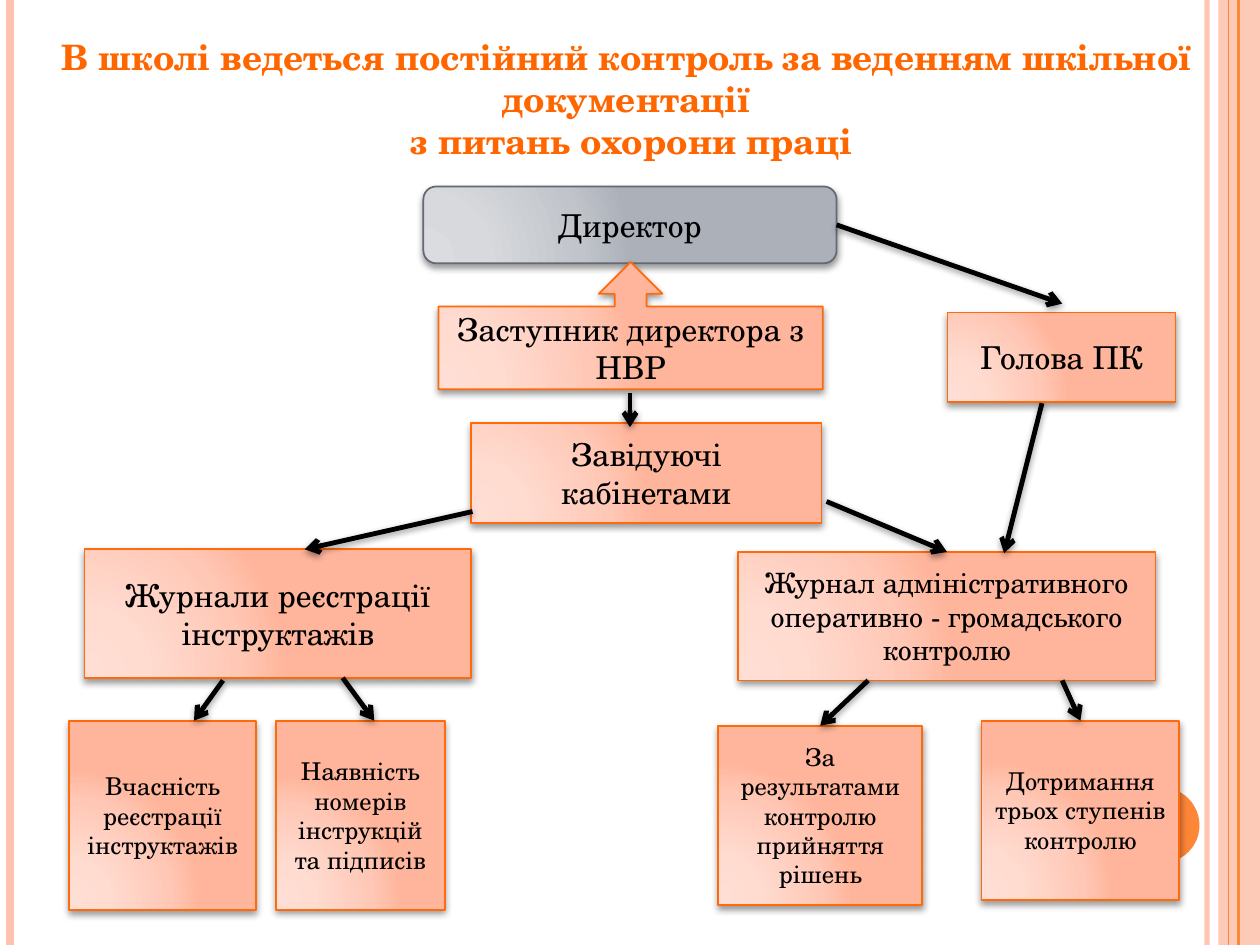
"""Build a slide with the chart of school labour-safety record control."""
from dataclasses import dataclass
from typing import Optional

import lxml.etree
import pptx
import pptx.dml.color
import pptx.enum.shapes
import pptx.enum.text
import pptx.oxml
import pptx.oxml.ns
import pptx.util

Inches = pptx.util.Inches
Pt = pptx.util.Pt
RGBColor = pptx.dml.color.RGBColor
Shapes = pptx.enum.shapes.MSO_SHAPE
Anchor = pptx.enum.text.MSO_ANCHOR

FONT = "TeX Gyre Schola"
BLACK = RGBColor(0x00, 0x00, 0x00)
TITLE_ORANGE = RGBColor(0xFF, 0x66, 0x00)
BORDER_ORANGE = RGBColor(0xFF, 0x6B, 0x0A)
BORDER_GRAY = RGBColor(0x63, 0x6A, 0x74)
ORANGE = RGBColor(0xFE, 0x86, 0x37)
PEACH = RGBColor(0xFE, 0xC3, 0xAE)
GRAY_STOPS = (
    (0, RGBColor(0xDA, 0xDC, 0xE0)),
    (30, RGBColor(0xD7, 0xD9, 0xDD)),
    (75, RGBColor(0xC1, 0xC5, 0xCB)),
    (100, RGBColor(0xAB, 0xB0, 0xB9)),
)
PEACH_STOPS = (
    (0, RGBColor(0xFF, 0xDE, 0xD5)),
    (30, RGBColor(0xFF, 0xDB, 0xD0)),
    (75, RGBColor(0xFF, 0xC8, 0xB6)),
    (100, RGBColor(0xFF, 0xB5, 0x9B)),
)
TOP, RIGHT = 0, 3


@dataclass(frozen=True)
class Box:
    text: str
    left: float
    top: float
    width: float
    height: float
    size: int = 18
    kind: int = Shapes.FLOWCHART_PROCESS
    stops: tuple = PEACH_STOPS
    border: RGBColor = BORDER_ORANGE


@dataclass(frozen=True)
class Arrow:
    start: tuple[float, float]
    end: tuple[float, float]
    source: Optional[str] = None
    target: Optional[str] = None


@dataclass(frozen=True)
class Stripe:
    x: float
    color: RGBColor
    width: float
    opacity: int = 100


STRIPES = (
    Stripe(9.58, PEACH, 3, 93),
    Stripe(0.08, PEACH, 4.5),
    Stripe(9.83, ORANGE, 1.5),
    Stripe(9.75, ORANGE, 0.75),
)
BOXES = {
    "director": Box("Директор", 3.36, 1.48, 3.28, 0.61, 18,
                    Shapes.ROUNDED_RECTANGLE, GRAY_STOPS, BORDER_GRAY),
    "deputy": Box("Заступник директора з НВР", 3.48, 2.08, 3.05, 1.01, 18,
                  Shapes.UP_ARROW_CALLOUT),
    "union": Box("Голова ПК", 7.52, 2.48, 1.81, 0.71),
    "heads": Box("Завідуючі кабінетами", 3.74, 3.36, 2.78, 0.79),
    "decisions": Box("За результатами контролю прийняття рішень", 5.7, 5.76, 1.62, 1.42, 14),
    "briefings": Box("Журнали реєстрації інструктажів", 0.67, 4.36, 3.07, 1.02),
    "control": Box("Журнал адміністративного оперативно - громадського контролю",
                   5.86, 4.38, 3.31, 1.02, 16),
    "timeliness": Box("Вчасність реєстрації інструктажів", 0.55, 5.72, 1.48, 1.5, 14),
    "signatures": Box("Наявність номерів інструкцій та підписів", 2.19, 5.72, 1.34, 1.5, 14),
    "stages": Box("Дотримання трьох ступенів контролю", 7.79, 5.72, 1.57, 1.42, 14),
}
ARROWS = (
    Arrow((6.64, 1.79), (8.43, 2.41), source="director"),
    Arrow((5, 3.12), (5, 3.39)),
    Arrow((3.75, 4.06), (2.42, 4.36)),
    Arrow((6.56, 3.98), (7.51, 4.36), target="control"),
    Arrow((8.27, 3.2), (7.97, 4.39)),
    Arrow((1.77, 5.4), (1.54, 5.72)),
    Arrow((2.72, 5.38), (2.97, 5.72)),
    Arrow((6.89, 5.4), (6.51, 5.76), target="decisions"),
    Arrow((8.43, 5.4), (8.57, 5.72), target="stages"),
)


def add_child(parent, tag: str, **attributes):
    """Append a drawing element and return it."""
    values = {name: str(value) for name, value in attributes.items()}
    return lxml.etree.SubElement(parent, pptx.oxml.ns.qn(tag), values)


def set_opacity(properties, percent: int) -> None:
    """Make the first solid colour below an element partly transparent."""
    color = next(properties.iter(pptx.oxml.ns.qn("a:srgbClr")))
    add_child(color, "a:alpha", val=percent * 1000)


def add_shadow(effects, opacity: int, distance: float) -> None:
    """Add a soft downward shadow to an effect list."""
    shadow = add_child(effects, "a:outerShdw", blurRad=Pt(4), dist=Pt(distance),
                       dir=5400000, rotWithShape=0)
    color = add_child(shadow, "a:srgbClr", val=BLACK)
    add_child(color, "a:alpha", val=opacity * 1000)


def set_gradient(shape, stops: tuple) -> None:
    """Fill a shape with a circular gradient."""
    shape.fill.background()
    properties = shape.element.spPr
    gradient = pptx.oxml.parse_xml(
        f'<a:gradFill {pptx.oxml.ns.nsdecls("a")} rotWithShape="1"/>')
    stop_list = add_child(gradient, "a:gsLst")
    for position, color in stops:
        stop = add_child(stop_list, "a:gs", pos=position * 1000)
        add_child(stop, "a:srgbClr", val=color)
    circle = add_child(gradient, "a:path", path="circle")
    add_child(circle, "a:fillToRect", l=5000, t=100000, r=120000, b=10000)
    properties.replace(properties.find(pptx.oxml.ns.qn("a:noFill")), gradient)


def set_text(shape, text: str, *, size: int, color: RGBColor = BLACK,
             bold: bool = False, anchor=Anchor.MIDDLE) -> None:
    """Write centred text into a shape, one paragraph per line."""
    frame = shape.text_frame
    frame.text = text
    frame.word_wrap = True
    frame.auto_size = pptx.enum.text.MSO_AUTO_SIZE.NONE
    frame.vertical_anchor = anchor
    for paragraph in frame.paragraphs:
        paragraph.alignment = pptx.enum.text.PP_ALIGN.CENTER
        for run in paragraph.runs:
            run.font.name = FONT
            run.font.size = Pt(size)
            run.font.bold = bold
            run.font.color.rgb = color


def add_line(slide, start: tuple, end: tuple, color: RGBColor, width: float):
    """Draw a straight connector; return it with its effect list."""
    connector = slide.shapes.add_connector(
        pptx.enum.shapes.MSO_CONNECTOR.STRAIGHT, *map(Inches, start + end))
    connector.line.color.rgb = color
    connector.line.width = Pt(width)
    return connector, add_child(connector.element.spPr, "a:effectLst")


def add_plain(slide, kind: int, bounds: tuple, color: RGBColor):
    """Draw a decorative shape without outline or shadow."""
    shape = slide.shapes.add_shape(kind, *map(Inches, bounds))
    shape.fill.solid()
    shape.fill.fore_color.rgb = color
    shape.line.fill.background()
    shape.shadow.inherit = False
    return shape


def add_box(slide, box: Box):
    """Draw one box of the chart."""
    shape = slide.shapes.add_shape(
        box.kind, *map(Inches, (box.left, box.top, box.width, box.height)))
    set_gradient(shape, box.stops)
    shape.line.color.rgb = box.border
    shape.line.width = Pt(1)
    shape.shadow.inherit = False
    add_shadow(shape.element.spPr.find(pptx.oxml.ns.qn("a:effectLst")), 40, 2)
    set_text(shape, box.text, size=box.size)
    return shape


def add_arrow(slide, arrow: Arrow, shapes: dict) -> None:
    """Draw an arrow and join it to the boxes it names."""
    connector, effects = add_line(slide, arrow.start, arrow.end, BLACK, 2.75)
    add_shadow(effects, 42, 1.6)
    add_child(connector.line._get_or_add_ln(), "a:tailEnd", type="arrow")
    if arrow.source:
        connector.begin_connect(shapes[arrow.source], RIGHT)
    if arrow.target:
        connector.end_connect(shapes[arrow.target], TOP)


def main() -> None:
    """Build and save the presentation."""
    presentation = pptx.Presentation()
    presentation.slide_width, presentation.slide_height = Inches(10), Inches(7.5)
    slide = presentation.slides.add_slide(presentation.slide_layouts[5])
    title = slide.shapes.title
    title.left, title.top, title.width, title.height = map(Inches, (0.31, 0.23, 9.33, 1.11))
    set_text(title, "В школі ведеться постійний контроль за веденням шкільної документації\n"
             " з питань охорони праці", size=20, color=TITLE_ORANGE, bold=True, anchor=Anchor.TOP)
    band = add_plain(slide, Shapes.RECTANGLE, (9.67, 0, 0.33, 7.5), PEACH)
    set_opacity(band.element.spPr, 87)
    for stripe in STRIPES:
        line, _ = add_line(slide, (stripe.x, 0), (stripe.x, 7.5), stripe.color, stripe.width)
        if stripe.opacity < 100:
            set_opacity(line.element.spPr, stripe.opacity)
    add_plain(slide, Shapes.OVAL, (8.92, 6.25, 0.6, 0.6), ORANGE)
    shapes = {name: add_box(slide, box) for name, box in BOXES.items()}
    for arrow in ARROWS:
        add_arrow(slide, arrow, shapes)
    presentation.save("out.pptx")


if __name__ == "__main__":
    main()
